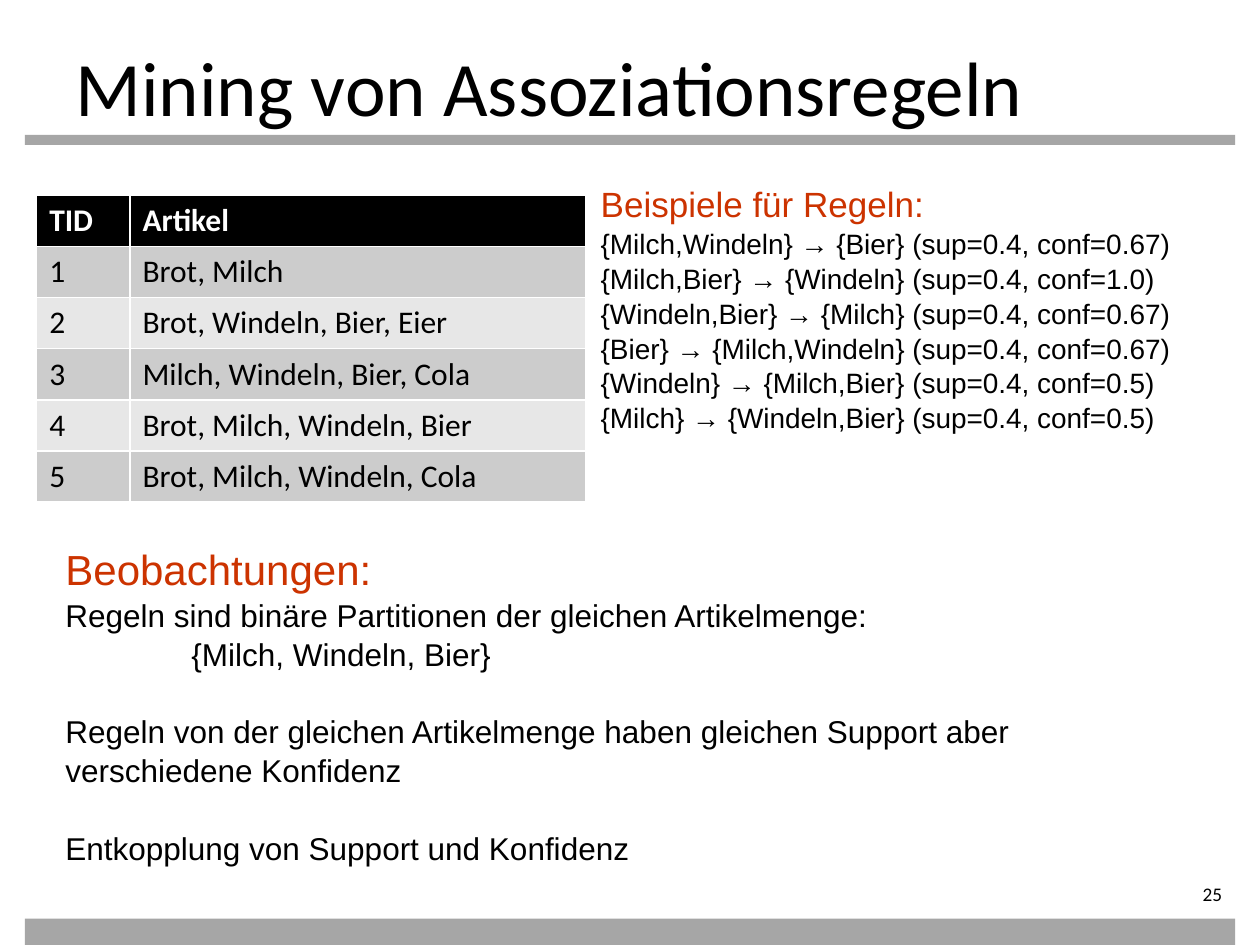
from pptx import Presentation
from pptx.dml.color import RGBColor
from pptx.enum.shapes import MSO_SHAPE
from pptx.enum.text import MSO_ANCHOR, PP_ALIGN
from pptx.util import Cm, Pt

RECTANGLE = MSO_SHAPE.RECTANGLE
MIDDLE, TOP = MSO_ANCHOR.MIDDLE, MSO_ANCHOR.TOP
LEFT, RIGHT = PP_ALIGN.LEFT, PP_ALIGN.RIGHT

BLACK, WHITE, RED, GREY = "000000", "FFFFFF", "CC3300", "A6A6A6"
ROW_FILLS = ["CCCCCC", "E7E7E7"]

TITLE = "Mining von Assoziationsregeln"
PAGE_NUMBER = "25"

TRANSACTIONS = [
    ("TID", "Artikel"),
    ("1", "Brot, Milch"),
    ("2", "Brot, Windeln, Bier, Eier"),
    ("3", "Milch, Windeln, Bier, Cola"),
    ("4", "Brot, Milch, Windeln, Bier"),
    ("5", "Brot, Milch, Windeln, Cola"),
]
COLUMN_WIDTHS = [1.88, 9.19]
ROW_HEIGHT = 1.03

RULES_HEADING = "Beispiele für Regeln:"
RULES = [
    ("{Milch,Windeln} → {Bier}", "0.67"),
    ("{Milch,Bier} → {Windeln}", "1.0"),
    ("{Windeln,Bier} → {Milch}", "0.67"),
    ("{Bier} → {Milch,Windeln}", "0.67"),
    ("{Windeln} → {Milch,Bier}", "0.5"),
    ("{Milch} → {Windeln,Bier}", "0.5"),
]

OBSERVATIONS_HEADING = "Beobachtungen:"
# text, indent in cm, space before in points
OBSERVATIONS = [
    ("Regeln sind binäre Partitionen der gleichen Artikelmenge:", 0, 0),
    ("{Milch, Windeln, Bier}", 2.54, 0),
    ("Regeln von der gleichen Artikelmenge haben gleichen Support aber "
     "verschiedene Konfidenz", 0, 21.6),
    ("Entkopplung von Support und Konfidenz", 0, 21.6),
]

BARS = [(0.5, 2.72, 24.4, 0.2), (0.5, 18.52, 24.4, 0.53)]


def rgb(color):
    return RGBColor.from_string(color)


def style(paragraph, size, color=BLACK, name="Calibri", bold=False):
    font = paragraph.font
    font.size, font.name, font.bold = Pt(size), name, bold
    font.color.rgb = rgb(color)


def add_frame(slide, box, anchor=TOP):
    frame = slide.shapes.add_textbox(*map(Cm, box)).text_frame
    frame.word_wrap = True
    frame.vertical_anchor = anchor
    return frame


def add_line(slide, box, text, size, anchor=TOP, align=LEFT):
    frame = add_frame(slide, box, anchor)
    paragraph = frame.paragraphs[0]
    paragraph.text = text
    paragraph.alignment = align
    style(paragraph, size)
    return frame


def add_section(slide, box, heading, heading_size, lines, size):
    """Write a red heading and below it lines of (text, indent, space before)."""
    frame = add_frame(slide, box)
    paragraph = frame.paragraphs[0]
    paragraph.text = heading
    paragraph.line_spacing = 1.04
    style(paragraph, heading_size, RED, "Arial")
    for text, indent, space in lines:
        paragraph = frame.add_paragraph()
        paragraph.text = text
        paragraph.line_spacing = 1.04
        paragraph.space_before = Pt(space)
        if indent:
            paragraph._p.get_or_add_pPr().set("marL", str(Cm(indent)))
        style(paragraph, size, name="Arial")


def add_transactions(slide, left, top):
    """The default table style supplies the white grid."""
    table = slide.shapes.add_table(
        len(TRANSACTIONS), len(COLUMN_WIDTHS), Cm(left), Cm(top),
        Cm(sum(COLUMN_WIDTHS)), Cm(ROW_HEIGHT * len(TRANSACTIONS))).table
    for column, width in zip(table.columns, COLUMN_WIDTHS):
        column.width = Cm(width)
    for r, transaction in enumerate(TRANSACTIONS):
        header = r == 0
        for c, text in enumerate(transaction):
            cell = table.cell(r, c)
            cell.text = text
            cell.fill.solid()
            cell.fill.fore_color.rgb = rgb(BLACK if header else ROW_FILLS[(r - 1) % 2])
            style(cell.text_frame.paragraphs[0], 18,
                  WHITE if header else BLACK, bold=header)


def main():
    prs = Presentation()
    prs.slide_width, prs.slide_height = Cm(25.4), Cm(19.05)
    slide = prs.slides.add_slide(prs.slide_layouts[6])

    for box in BARS:
        bar = slide.shapes.add_shape(RECTANGLE, *map(Cm, box))
        bar.shadow.inherit = False
        bar.fill.solid()
        bar.fill.fore_color.rgb = rgb(GREY)
        bar.line.fill.background()

    add_line(slide, (1.27, 0.13, 22.86, 3.18), TITLE, 44, anchor=MIDDLE)
    rules = [(f"{rule} (sup=0.4, conf={conf})", 0, 0) for rule, conf in RULES]
    add_section(slide, (11.86, 3.53, 13.13, 5.31), RULES_HEADING, 20, rules, 16)
    add_section(slide, (1.07, 10.8, 22.02, 6.68),
                OBSERVATIONS_HEADING, 24, OBSERVATIONS, 18)
    add_transactions(slide, 0.74, 3.94)

    number = add_line(slide, (22.1, 17.78, 2.79, 0.56), PAGE_NUMBER, 11, align=RIGHT)
    number.margin_left = number.margin_top = number.margin_bottom = 0

    prs.save("out.pptx")


if __name__ == "__main__":
    main()
